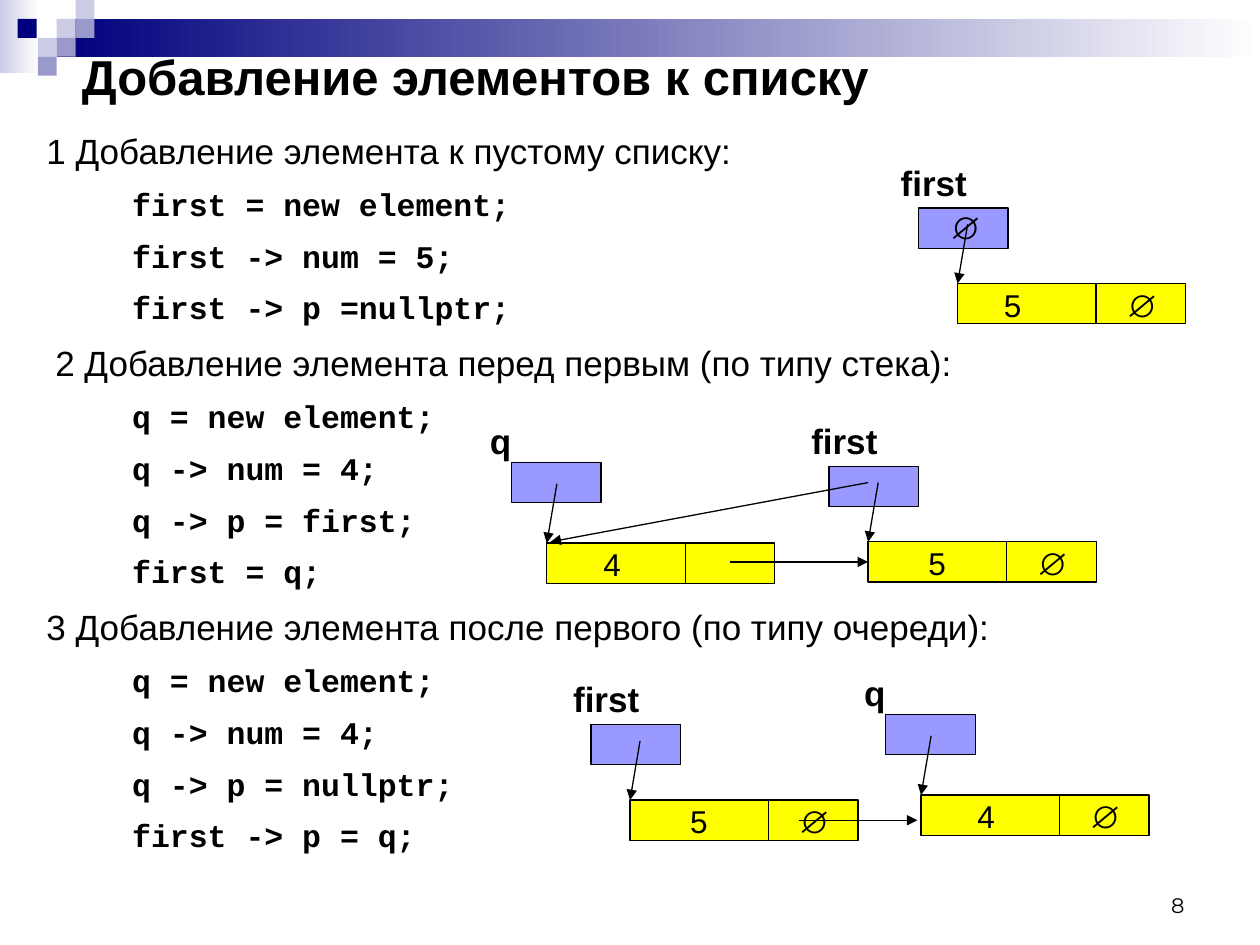
from lxml.etree import SubElement as Sub
from pptx import Presentation
from pptx.dml.color import RGBColor as RGB
from pptx.enum.shapes import MSO_CONNECTOR as Conn, MSO_SHAPE as Shape
from pptx.enum.text import MSO_ANCHOR as Anchor, MSO_AUTO_SIZE as Auto, PP_ALIGN as Align
from pptx.oxml.ns import qn
from pptx.util import Inches, Pt

BLACK = RGB(0, 0, 0)
WHITE = RGB(255, 255, 255)
NAVY = RGB(0, 0, 0x7D)
PALE = RGB(0xCC, 0xCC, 0xE6)
MID = RGB(0x99, 0x99, 0xCC)
LILAC = RGB(0x99, 0x99, 0xFF)
YELLOW = RGB(255, 255, 0)

TILE = 0.15
TILES = [(0.45, 0.15, PALE), (0.6, 0, PALE), (0.6, 0.15, MID), (0.3, 0.3, PALE),
         (0.14, 0.15, NAVY), (0.45, 0.3, MID), (0.3, 0.45, MID)]
BANDS = [(0, 0, 0.31, 0.58, PALE), (0.45, 0.15, 9.55, 0.3, NAVY)]

STEPS = [
    ("1 Добавление элемента к пустому списку:", 0,
     ["first = new element;", "first -> num = 5;", "first -> p =nullptr;"]),
    ("2 Добавление элемента перед первым (по типу стека):", 0.07,
     ["q = new element;", "q -> num = 4;", "q -> p = first;", "first = q;"]),
    ("3 Добавление элемента после первого (по типу очереди):", 0,
     ["q = new element;", "q -> num = 4;", "q -> p = nullptr;", "first -> p = q;"]),
]


def style(para, size, face="Arial", bold=False):
    """Format every run of a paragraph."""
    for run in para.runs:
        font = run.font
        font.size, font.name, font.bold = Pt(size), face, bold
        font.color.rgb = BLACK


def add_box(slide, x, y, w, h, color, edge=True):
    """Add a filled rectangle."""
    box = slide.shapes.add_shape(Shape.RECTANGLE, Inches(x), Inches(y), Inches(w), Inches(h))
    box.shadow.inherit = False
    box.fill.solid()
    box.fill.fore_color.rgb = color
    if edge:
        box.line.color.rgb = BLACK
        box.line.width = Pt(0.75)
    else:
        box.line.fill.background()
    return box


def add_band(slide, x, y, w, h, color):
    """Add a rectangle that fades to white."""
    fill = add_box(slide, x, y, w, h, color, False).fill
    fill.gradient()
    fill.gradient_angle = 0
    for stop, tone, place in zip(fill.gradient_stops, (color, WHITE), (0, 1)):
        stop.color.rgb = tone
        stop.position = place


def add_text(slide, x, y, w, h, text, size, bold=False):
    """Add a one-line label that fits its text."""
    frame = slide.shapes.add_textbox(Inches(x), Inches(y), Inches(w), Inches(h)).text_frame
    frame.word_wrap = False
    frame.auto_size = Auto.SHAPE_TO_FIT_TEXT
    frame.text = text
    style(frame.paragraphs[0], size, bold=bold)


def add_arrow(slide, x1, y1, x2, y2):
    """Add a thin arrow between two points."""
    line = slide.shapes.add_connector(Conn.STRAIGHT, Inches(x1), Inches(y1), Inches(x2), Inches(y2))
    line.line.color.rgb = BLACK
    line.line.width = Pt(0.75)
    Sub(line.line._get_or_add_ln(), qn("a:tailEnd"), type="triangle")
    Sub(line.element.spPr, qn("a:effectLst"))
    return line


def add_node(slide, x, y, name, value, shift, empty=True):
    """Add a list element with its named pointer and return the value cell."""
    if name == "first":
        px, py, nx, ny, nw = x - 0.31, y - 0.6, x - 0.55, y - 1.02, 0.75
    else:
        px, py, nx, ny, nw = x - 0.28, y - 0.64, x - 0.55, y - 1.03, 0.38
    add_box(slide, px, py, 0.71, 0.32, LILAC)
    add_text(slide, nx, ny, nw, 0.43, name, 20, True)
    cell = add_box(slide, x, y, 1.1, 0.32, YELLOW)
    add_box(slide, x + 1.1, y, 0.71, 0.32, YELLOW)
    add_arrow(slide, x + 0.08, y - 0.47, x, y)
    add_text(slide, x + shift, y - 0.03, 0.34, 0.4, value, 18)
    if empty:
        add_text(slide, x + 1.24, y - 0.03, 0.41, 0.4, "∅", 18)
    return cell


def add_title(slide, text):
    """Place the title above the decoration."""
    title = slide.shapes.title
    slide.shapes.element.append(title.element)
    title.left, title.top, title.width, title.height = map(Inches, (0.55, 0.36, 9.45, 0.48))
    frame = title.text_frame
    frame.text = text
    frame.auto_size = Auto.NONE
    frame.vertical_anchor = Anchor.MIDDLE
    frame.paragraphs[0].alignment = Align.LEFT
    style(frame.paragraphs[0], 28, bold=True)


def add_steps(slide):
    """Add the headings and their code lines."""
    frame = slide.shapes.add_textbox(Inches(0.27), Inches(0.91), Inches(9.45), Inches(6.3)).text_frame
    frame.word_wrap = True
    rows = []
    for head, left, code in STEPS:
        rows.append((head, left, 20, "Arial", False))
        rows += [(text, 0.68, 18, "Courier New", True) for text in code]
    for i, (text, left, size, face, bold) in enumerate(rows):
        para = frame.add_paragraph() if i else frame.paragraphs[0]
        para.text = text
        para.line_spacing = 1.2
        para.space_before = Pt(size * 0.2)
        para._p.get_or_add_pPr().set("marL", str(Inches(left)))
        style(para, size, face, bold)


def add_page(slide, text):
    """Add the page number at the lower right."""
    frame = slide.shapes.add_textbox(Inches(7.17), Inches(6.83), Inches(2.33), Inches(0.5)).text_frame
    frame.word_wrap = True
    frame.vertical_anchor = Anchor.BOTTOM
    frame.text = text
    frame.paragraphs[0].alignment = Align.RIGHT
    style(frame.paragraphs[0], 12, "Montserrat")


def main():
    """Build the slide and save it."""
    deck = Presentation()
    deck.slide_width, deck.slide_height = Inches(10), Inches(7.5)
    slide = deck.slides.add_slide(deck.slide_layouts[5])
    for band in BANDS:
        add_band(slide, *band)
    for x, y, color in TILES:
        add_box(slide, x, y, TILE, TILE, color, False)
    add_page(slide, "8")
    add_title(slide, "Добавление элементов к списку")
    add_steps(slide)

    add_node(slide, 7.6, 2.25, "first", "5", 0.27)
    add_text(slide, 7.44, 1.6, 0.41, 0.4, "∅", 18)

    old = add_node(slide, 6.89, 4.3, "first", "5", 0.38)
    add_node(slide, 4.34, 4.31, "q", "4", 0.35, False)
    add_arrow(slide, 5.79, 4.46, 6.89, 4.46).end_connect(old, 1)
    add_arrow(slide, 6.89, 3.83, 4.37, 4.3)

    add_node(slide, 5, 6.35, "first", "5", 0.38)
    add_node(slide, 7.31, 6.31, "q", "4", 0.35)
    add_arrow(slide, 6.34, 6.51, 7.28, 6.51)
    deck.save("out.pptx")


if __name__ == "__main__":
    main()
